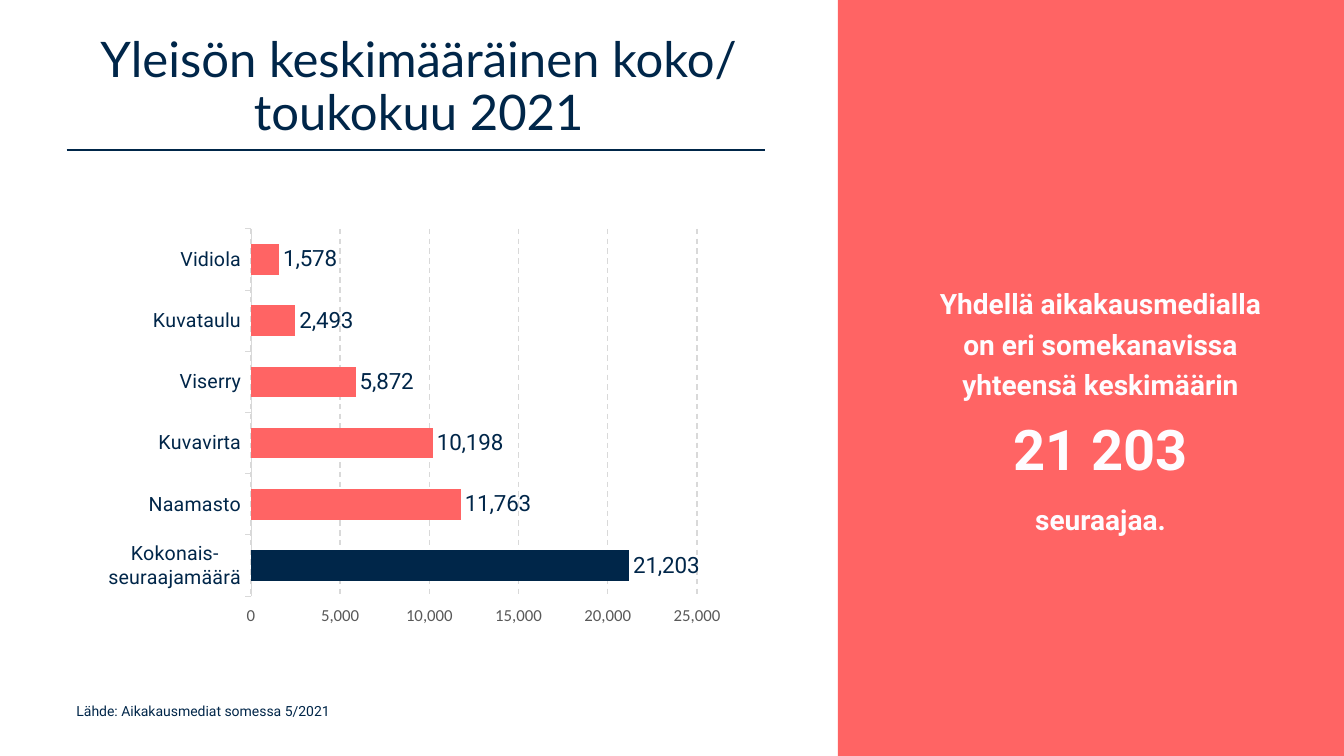
"""Build the slide on the average social media audience size in May 2021."""
from dataclasses import dataclass

from lxml import etree
from pptx import Presentation
from pptx import util as u
from pptx.chart import data as chart_data
from pptx.dml import color
from pptx.enum import chart as charts, dml, shapes, text
from pptx.oxml import ns


@dataclass(frozen=True)
class Theme:
    """Colours, fonts and type sizes."""
    navy: str = "002649"
    coral: str = "FF6464"
    white: str = "FEFCFF"
    grid: str = "D9D9D9"
    grey: str = "595959"
    heading: str = "Lato"
    body: str = "Roboto"
    scale: str = "Calibri"
    title_size: int = 35
    number_size: int = 40
    message_size: int = 20
    value_size: int = 16
    category_size: int = 14
    scale_size: int = 12
    source_size: int = 10


theme = Theme()


def style(font, size, name, shade, bold=False):
    """Set size, typeface, colour and weight of a font."""
    font.size = u.Pt(size)
    font.name = name
    font.bold = bold
    font.color.rgb = color.RGBColor.from_string(shade)


def add_span(para, words, size, name, shade, bold=False):
    """Add one formatted run to a paragraph."""
    span = para.add_run()
    span.text = words
    style(span.font, size, name, shade, bold)


deck = Presentation()
deck.slide_width = u.Inches(13.33)
deck.slide_height = u.Inches(7.5)
page = deck.slides.add_slide(deck.slide_layouts[5])

title = page.shapes.title
title.left, title.top = u.Inches(0), u.Inches(0.25)
title.width, title.height = u.Inches(8.31), u.Inches(1.25)
title.text_frame.word_wrap = True
title.text_frame.auto_size = text.MSO_AUTO_SIZE.NONE
title.text_frame.vertical_anchor = text.MSO_ANCHOR.MIDDLE
para = title.text_frame.paragraphs[0]
para.alignment = text.PP_ALIGN.CENTER
para.line_spacing = 0.9
add_span(para, "Yleisön keskimääräinen koko/ toukokuu 2021",
         theme.title_size, theme.heading, theme.navy)

panel = page.shapes.add_shape(shapes.MSO_SHAPE.RECTANGLE, u.Inches(8.31), u.Inches(0),
                              u.Inches(5.02), u.Inches(7.5))
panel.shadow.inherit = False
panel.fill.solid()
panel.fill.fore_color.rgb = color.RGBColor.from_string(theme.coral)
panel.line.fill.background()

rule = page.shapes.add_connector(shapes.MSO_CONNECTOR.STRAIGHT, u.Inches(0.66),
                                 u.Inches(1.49), u.Inches(7.59), u.Inches(1.49))
rule.line.width = u.Pt(1)
rule.line.color.rgb = color.RGBColor.from_string(theme.navy)
etree.SubElement(rule._element.spPr, ns.qn("a:effectLst"))

source = page.shapes.add_textbox(u.Inches(0.66), u.Inches(6.92), u.Inches(6.58), u.Inches(0.44))
source.text_frame.word_wrap = True
add_span(source.text_frame.paragraphs[0], "Lähde: Aikakausmediat somessa 5/2021",
         theme.source_size, theme.body, theme.navy)

message = page.shapes.add_textbox(u.Inches(9.04), u.Inches(1.5), u.Inches(3.75), u.Inches(5.1))
frame = message.text_frame
frame.word_wrap = True
frame.vertical_anchor = text.MSO_ANCHOR.MIDDLE
lead, ending = frame.paragraphs[0], frame.add_paragraph()
for para in (lead, ending):
    para.alignment = text.PP_ALIGN.CENTER
    para.line_spacing = 1.2
ending.space_before = u.Pt(10)
add_span(lead, "Yhdellä aikakausmedialla on eri somekanavissa yhteensä keskimäärin",
         theme.message_size, theme.body, theme.white, True)
lead.add_line_break()
add_span(lead, "21 203", theme.number_size, theme.body, theme.white, True)
add_span(ending, "seuraajaa.", theme.message_size, theme.body, theme.white, True)

followers = {
    "Kokonais-\nseuraajamäärä": 21203,
    "Naamasto": 11763,
    "Kuvavirta": 10198,
    "Viserry": 5872,
    "Kuvataulu": 2493,
    "Vidiola": 1578,
}
numbers = chart_data.CategoryChartData(number_format="#,##0")
numbers.categories = list(followers)
numbers.add_series("Seuraajat", list(followers.values()))
chart = page.shapes.add_chart(charts.XL_CHART_TYPE.BAR_CLUSTERED, u.Inches(0.55), u.Inches(1.88),
                              u.Inches(7.76), u.Inches(4.34), numbers).chart
chart.has_legend = False
chart.has_title = False
style(chart.font, theme.scale_size, theme.scale, theme.grey)

plot = chart.plots[0]
plot.gap_width = 100
plot.vary_by_categories = False
bars = plot.series[0]
bars.format.fill.solid()
bars.format.fill.fore_color.rgb = color.RGBColor.from_string(theme.coral)
total = bars.points[0].format.fill
total.solid()
total.fore_color.rgb = color.RGBColor.from_string(theme.navy)

labels = bars.data_labels
labels.show_value = True
labels.position = charts.XL_LABEL_POSITION.OUTSIDE_END
labels.number_format = "#,##0"
labels.number_format_is_linked = False
style(labels.font, theme.value_size, theme.body, theme.navy)

channels = chart.category_axis
channels.major_tick_mark = charts.XL_TICK_MARK.OUTSIDE
channels.format.line.width = u.Pt(0.75)
channels.format.line.color.rgb = color.RGBColor.from_string(theme.grid)
style(channels.tick_labels.font, theme.category_size, theme.body, theme.navy)

scale = chart.value_axis
scale.minimum_scale, scale.maximum_scale, scale.major_unit = 0, 25000, 5000
scale.major_tick_mark = charts.XL_TICK_MARK.OUTSIDE
scale.format.line.fill.background()
scale.tick_labels.number_format = "#,##0"
scale.tick_labels.number_format_is_linked = False
style(scale.tick_labels.font, theme.scale_size, theme.scale, theme.grey)
grid = scale.major_gridlines.format.line
grid.width = u.Pt(1)
grid.color.rgb = color.RGBColor.from_string(theme.grid)
grid.dash_style = dml.MSO_LINE.DASH

plot_area = chart._chartSpace.chart.plotArea
for old_layout in plot_area.findall(ns.qn("c:layout")):
    plot_area.remove(old_layout)
layout = etree.Element(ns.qn("c:layout"))
manual = etree.SubElement(layout, ns.qn("c:manualLayout"))
for tag, setting in (("layoutTarget", "inner"), ("xMode", "edge"), ("yMode", "edge"),
                     ("x", "0.25"), ("y", "0.09"), ("w", "0.57"), ("h", "0.84")):
    etree.SubElement(manual, ns.qn(f"c:{tag}")).set("val", setting)
plot_area.insert(0, layout)

deck.save("out.pptx")
